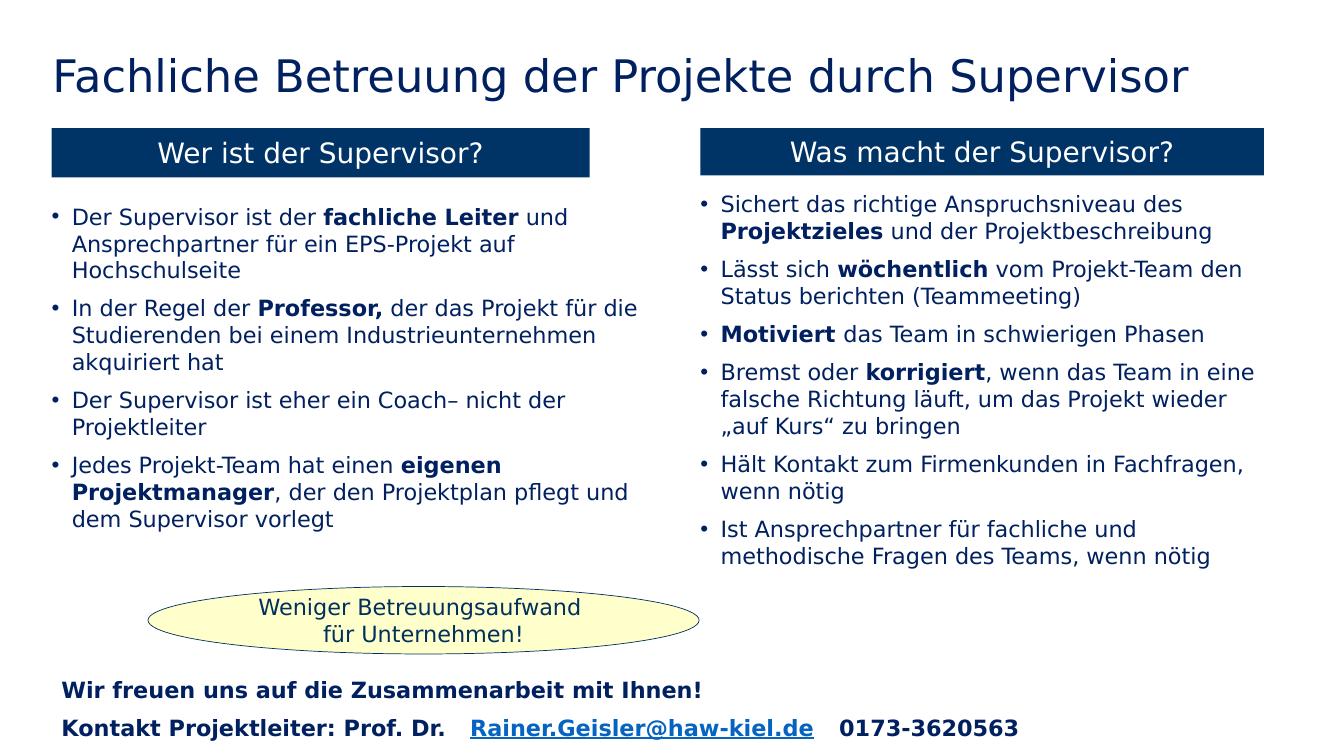
from lxml.etree import SubElement
from pptx import Presentation
from pptx.dml.color import RGBColor
from pptx.enum.shapes import MSO_SHAPE
from pptx.enum.text import MSO_ANCHOR, MSO_AUTO_SIZE, PP_ALIGN
from pptx.oxml.ns import qn
from pptx.util import Cm, Pt

NAVY = RGBColor(0x00, 0x20, 0x60)
BANNER = RGBColor(0x00, 0x33, 0x66)
OUTLINE = RGBColor(0x00, 0x30, 0x5D)
CREAM = RGBColor(0xFF, 0xFF, 0xCC)
WHITE = RGBColor(0xFF, 0xFF, 0xFF)
LINK = RGBColor(0x05, 0x63, 0xC1)

LEFT, RIGHT = 1.3, 17.65  # column edges in cm

# Asterisks enclose bold text
WHO = [
    "Der Supervisor ist der *fachliche Leiter* und Ansprechpartner für ein EPS-Projekt auf Hochschulseite",
    "In der Regel der *Professor,* der das Projekt für die Studierenden bei einem Industrieunternehmen akquiriert hat",
    "Der Supervisor ist eher ein Coach– nicht der Projektleiter",
    "Jedes Projekt-Team hat einen *eigenen Projektmanager*, der den Projektplan pflegt und dem Supervisor vorlegt",
]
WHAT = [
    "Sichert das richtige Anspruchsniveau des *Projektzieles* und der Projektbeschreibung",
    "Lässt sich *wöchentlich* vom Projekt-Team den Status berichten (Teammeeting)",
    "*Motiviert *das Team in schwierigen Phasen",
    "Bremst oder *korrigiert*, wenn das Team in eine falsche Richtung läuft, "
    "um das Projekt wieder „auf Kurs“ zu bringen",
    "Hält Kontakt zum Firmenkunden in Fachfragen, wenn nötig",
    "Ist Ansprechpartner für fachliche und methodische Fragen des Teams, wenn nötig",
]


class SlideBuilder:
    font = "DejaVu Sans"
    size = 16
    gap = Pt(8)

    def __init__(self, slide):
        self.s = slide

    def place(self, sp, x, y, w, h):
        sp.left, sp.top, sp.width, sp.height = Cm(x), Cm(y), Cm(w), Cm(h)

    def frame(self, sp, anchor=MSO_ANCHOR.TOP, inset=0, wrap=True):
        tf = sp.text_frame
        tf.auto_size = MSO_AUTO_SIZE.NONE
        tf.word_wrap = wrap
        tf.vertical_anchor = anchor
        tf.margin_left = tf.margin_right = Cm(2 * inset)
        tf.margin_top = tf.margin_bottom = Cm(inset)
        return tf

    def paragraph(self, tf, index):
        p = tf.add_paragraph() if index else tf.paragraphs[0]
        p.space_before = self.gap if index else Pt(0)
        return p

    def run(self, p, text, color=NAVY, size=None, bold=False, underline=False):
        r = p.add_run()
        r.text = text
        f = r.font
        f.name, f.size, f.bold, f.underline = self.font, Pt(size or self.size), bold, underline
        f.color.rgb = color

    def title(self, text, *box):
        sp = self.s.shapes.title
        self.place(sp, *box)
        p = self.frame(sp).paragraphs[0]
        p.alignment = PP_ALIGN.LEFT
        p.line_spacing = 0.9
        self.run(p, text, size=32)

    def bullets(self, placeholder, items, *box):
        sp = self.s.placeholders[placeholder]
        self.place(sp, *box)
        tf = self.frame(sp)
        for i, item in enumerate(items):
            p = self.paragraph(tf, i)
            pPr = p._p.get_or_add_pPr()
            pPr.set("marL", str(Cm(0.51)))
            pPr.set("indent", str(-Cm(0.51)))
            SubElement(pPr, qn("a:buFont"), typeface="Arial")
            SubElement(pPr, qn("a:buChar"), char="•")
            for k, part in enumerate(item.split("*")):
                if part:
                    self.run(p, part, bold=k % 2 == 1)

    def shape(self, kind, lines, *box, fill, color, size, line=None):
        sp = self.s.shapes.add_shape(kind, *map(Cm, box))
        sp.shadow.inherit = False
        sp.fill.solid()
        sp.fill.fore_color.rgb = fill
        if line:
            sp.line.color.rgb = line
            sp.line.width = Pt(0.5)
        else:
            sp.line.fill.background()
        p = self.frame(sp, MSO_ANCHOR.MIDDLE, wrap=False).paragraphs[0]
        p.alignment = PP_ALIGN.CENTER
        for i, text in enumerate(lines):
            if i:
                p.add_line_break()
            self.run(p, text, color, size)

    def banner(self, text, *box):
        self.shape(MSO_SHAPE.RECTANGLE, [text], *box, fill=BANNER, color=WHITE, size=20)

    def contact(self, greeting, parts, tabs, *box):
        tf = self.frame(self.s.shapes.add_textbox(*map(Cm, box)), inset=0.127)
        self.run(self.paragraph(tf, 0), greeting, bold=True)
        p = self.paragraph(tf, 1)
        stops = SubElement(p._p.get_or_add_pPr(), qn("a:tabLst"))
        for pos in tabs:
            SubElement(stops, qn("a:tab"), pos=str(Cm(pos)), algn="l")
        for text, color, underline in parts:
            self.run(p, text, color, bold=True, underline=underline)


def main():
    prs = Presentation()
    prs.slide_width, prs.slide_height = Cm(33.87), Cm(19.05)
    b = SlideBuilder(prs.slides.add_slide(prs.slide_layouts[3]))

    # Title
    b.title("Fachliche Betreuung der Projekte durch Supervisor", 1.32, 1.35, 31.32, 3.07)

    # Two columns: banner above list
    b.bullets(1, WHO, LEFT, 5.11, 15.19, 6.27)
    b.banner("Wer ist der Supervisor?", LEFT, 3.23, 13.56, 1.24)
    b.banner("Was macht der Supervisor?", RIGHT, 3.23, 14.2, 1.19)
    b.bullets(2, WHAT, RIGHT, 4.8, 14.55, 8.94)

    # Key message
    b.shape(MSO_SHAPE.OVAL, ["Weniger Betreuungsaufwand ", "für Unternehmen!"],
            3.73, 14.78, 13.89, 1.7, fill=CREAM, color=OUTLINE, size=16, line=OUTLINE)

    # Contact lines
    b.contact("Wir freuen uns auf die Zusammenarbeit mit Ihnen!",
              [("Kontakt Projektleiter: Prof. Dr.\t", NAVY, False),
               ("Rainer.Geisler@haw-kiel.de", LINK, True),
               ("\t0173-3620563", NAVY, False)],
              [10.3, 19.6], LEFT, 16.92, 31, 1.96)

    prs.save("out.pptx")


if __name__ == "__main__":
    main()
